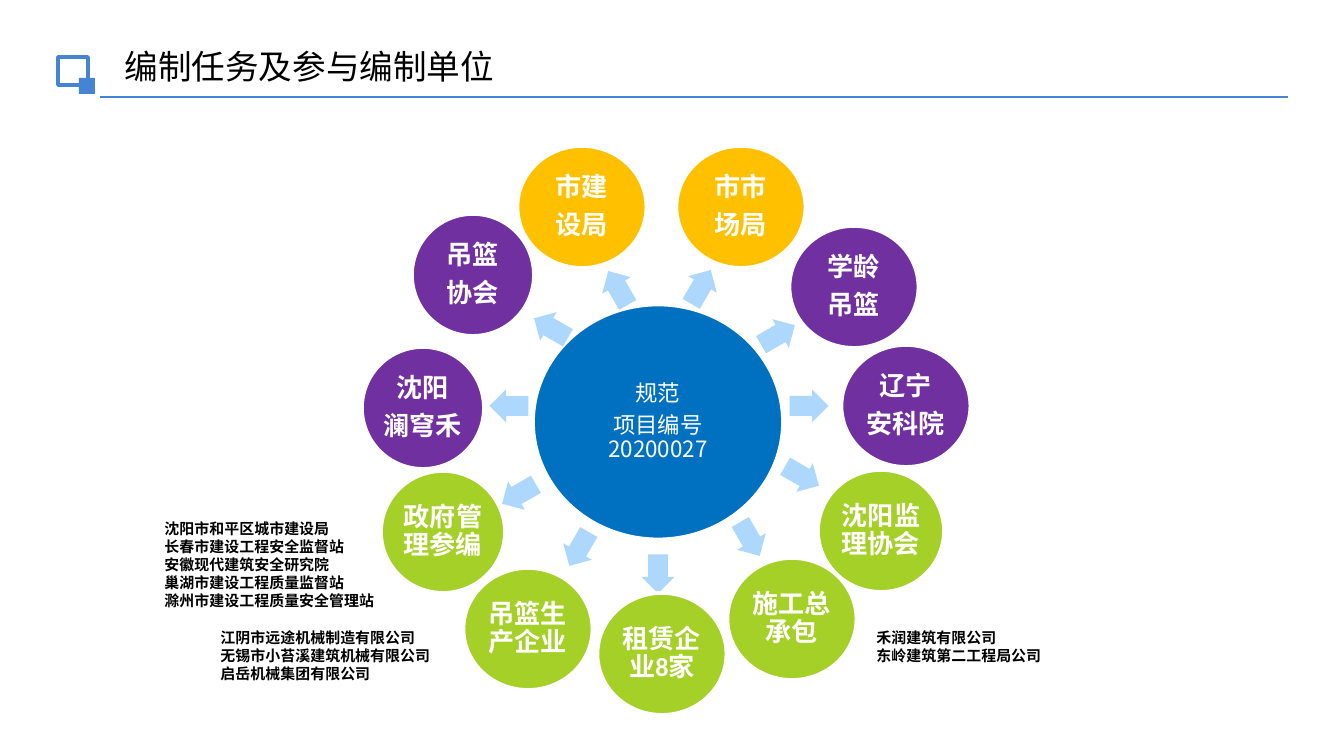
from dataclasses import dataclass

from lxml import etree
from pptx import Presentation
from pptx import util as u
from pptx.dml.color import RGBColor
from pptx.enum import shapes, text
from pptx.oxml import ns

PX = 9144000 / 1344


@dataclass(frozen=True)
class Theme:
    accent: str = "4584D3"
    hub: str = "0070C0"
    bureau: str = "FFC000"
    editor: str = "7030A0"
    partner: str = "A5D028"
    arrow: str = "AED7FE"
    white: str = "FFFFFF"
    black: str = "000000"
    title_size: int = 18
    member_size: int = 14
    hub_size: int = 12
    list_size: int = 8
    outline: int = 2
    rule: float = 0.75
    text_font: str = "Arial"
    member_font: str = "Calibri"
    hub_font: str = "Noto Sans CJK JP"


def px(value):
    return u.Emu(round(value * PX))


def box(*lengths):
    return [px(length) for length in lengths]


class SlideBuilder:
    def __init__(self, slide, theme):
        self.slide = slide
        self.theme = theme

    def shape(self, preset, bounds, fill, line=None):
        item = self.slide.shapes.add_shape(preset, *box(*bounds))
        item.shadow.inherit = False
        item.fill.solid()
        item.fill.fore_color.rgb = RGBColor.from_string(fill)
        if line:
            item.line.color.rgb = RGBColor.from_string(line)
            item.line.width = u.Pt(self.theme.outline)
        else:
            item.line.fill.background()
        return item

    def font(self, paragraph, name, size, color, bold):
        paragraph.font.name = name
        paragraph.font.size = u.Pt(size)
        paragraph.font.bold = bold
        paragraph.font.color.rgb = RGBColor.from_string(color)

    def rule(self, left, right, y):
        rule = self.slide.shapes.add_connector(
            shapes.MSO_CONNECTOR.STRAIGHT, *box(left, y, right, y))
        rule.line.color.rgb = RGBColor.from_string(self.theme.accent)
        rule.line.width = u.Pt(self.theme.rule)
        properties = rule._element.find(ns.qn("p:spPr"))
        etree.SubElement(properties, ns.qn("a:effectLst"))

    def circle(self, center, size, fill, label, font, points, bold):
        x, y = center
        width, height = size
        circle = self.shape(
            shapes.MSO_SHAPE.OVAL,
            (x - width / 2, y - height / 2, width, height),
            fill, self.theme.white)
        frame = circle.text_frame
        frame.word_wrap = True
        frame.vertical_anchor = text.MSO_ANCHOR.MIDDLE
        frame.margin_left = frame.margin_right = px(2)
        frame.margin_top = frame.margin_bottom = 0
        frame.text = label
        for paragraph in frame.paragraphs:
            paragraph.alignment = text.PP_ALIGN.CENTER
            paragraph.line_spacing = 0.9
            paragraph.space_after = u.Pt(0.35 * points)
            self.font(paragraph, font, points, self.theme.white, bold)

    def arrow(self, center, angle):
        x, y = center
        width, height = 39, 33
        arrow = self.shape(
            shapes.MSO_SHAPE.RIGHT_ARROW,
            (x - width / 2, y - height / 2, width, height),
            self.theme.arrow)
        arrow.adjustments[0] = 0.6
        arrow.adjustments[1] = 0.5
        arrow.rotation = angle % 360

    def placeholder(self, index, bounds, lines, size, bold):
        holder = self.slide.placeholders[index]
        holder.left, holder.top, holder.width, holder.height = box(*bounds)
        frame = holder.text_frame
        frame.text = "\n".join(lines)
        frame.word_wrap = True
        frame.auto_size = text.MSO_AUTO_SIZE.NONE
        frame.vertical_anchor = text.MSO_ANCHOR.TOP
        for paragraph in frame.paragraphs:
            properties = paragraph._p.get_or_add_pPr()
            properties.set("marL", "0")
            properties.set("indent", "0")
            etree.SubElement(properties, ns.qn("a:buNone"))
            paragraph.alignment = text.PP_ALIGN.LEFT
            paragraph.space_before = u.Pt(0)
            self.font(paragraph, self.theme.text_font, size,
                      self.theme.black, bold)

    def remove_placeholder(self, index):
        element = self.slide.placeholders[index]._element
        element.getparent().remove(element)


def main():
    theme = Theme()
    deck = Presentation()
    deck.slide_width, deck.slide_height = box(1344, 756)
    comparison_layout = deck.slide_layouts[4]
    builder = SlideBuilder(deck.slides.add_slide(comparison_layout), theme)

    builder.placeholder(0, (111, 39, 420, 54), ["编制任务及参与编制单位"],
                        theme.title_size, False)
    builder.rule(100, 1288, 97)
    builder.shape(shapes.MSO_SHAPE.RECTANGLE, (58, 57, 30, 28),
                  theme.white, theme.accent)
    builder.shape(shapes.MSO_SHAPE.RECTANGLE, (79, 78, 16, 16), theme.accent)

    builder.circle((658, 422), (250, 235), theme.hub,
                   "规范\n项目编号20200027",
                   theme.hub_font, theme.hub_size, False)

    members = [
        ("市市\n场局", theme.bureau, (741, 207), 129, (701, 287)),
        ("学龄\n吊篮", theme.editor, (854, 287), 129, (778, 335)),
        ("辽宁\n安科院", theme.editor, (906, 406), 129, (809, 406)),
        ("沈阳监理协会", theme.partner, (881, 531), 126, (802, 476)),
        ("施工总承包", theme.partner, (792, 619), 129, (750, 539)),
        ("租赁企业8家", theme.partner, (662, 654), 129, (658, 574)),
        ("吊篮生产企业", theme.partner, (528, 629), 129, (579, 549)),
        ("政府管理参编", theme.partner, (443, 532), 124, (519, 494)),
        ("沈阳\n澜穹禾", theme.editor, (423, 408), 122, (509, 406)),
        ("吊篮\n协会", theme.editor, (473, 275), 122, (551, 328)),
        ("市建\n设局", theme.bureau, (582, 207), 129, (618, 288)),
    ]
    for step, (label, fill, center, width, arrow_center) in enumerate(members):
        builder.arrow(arrow_center, 30 * step - 60)
        builder.circle(center, (width, 122), fill, label,
                       theme.member_font, theme.member_size, True)

    participants = [
        (1, (151, 513, 250, 104), [
            "沈阳市和平区城市建设局", "长春市建设工程安全监督站",
            "安徽现代建筑安全研究院", "巢湖市建设工程质量监督站",
            "滁州市建设工程质量安全管理站"]),
        (2, (207, 622, 250, 68), [
            "江阴市远途机械制造有限公司", "无锡市小苔溪建筑机械有限公司",
            "启岳机械集团有限公司"]),
        (3, (863, 622, 200, 50), [
            "禾润建筑有限公司", "东岭建筑第二工程局公司"]),
    ]
    for index, bounds, names in participants:
        builder.placeholder(index, bounds, names, theme.list_size, True)
    builder.remove_placeholder(4)

    deck.save("out.pptx")


if __name__ == "__main__":
    main()
